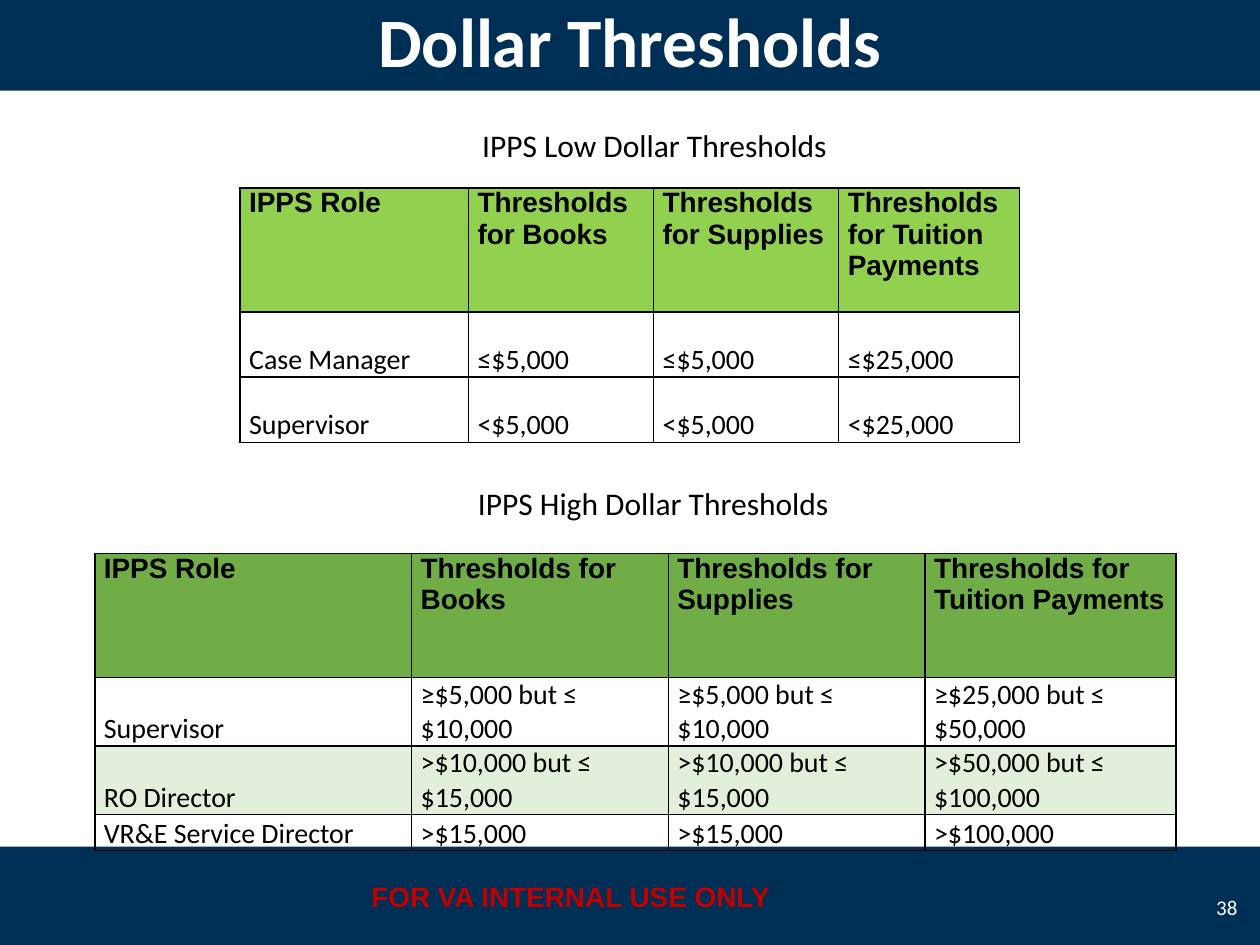
from pptx import Presentation
from pptx.dml.color import RGBColor
from pptx.enum.shapes import MSO_SHAPE
from pptx.enum.text import MSO_ANCHOR, PP_ALIGN
from pptx.oxml.ns import qn
from pptx.util import Pt
from lxml import etree

RECT = MSO_SHAPE.RECTANGLE
TOP, MIDDLE, BOTTOM = MSO_ANCHOR.TOP, MSO_ANCHOR.MIDDLE, MSO_ANCHOR.BOTTOM
CENTER, RIGHT, LEFT = PP_ALIGN.CENTER, PP_ALIGN.RIGHT, PP_ALIGN.LEFT

# Content
TITLE = "Dollar Thresholds"
NOTICE = "FOR VA INTERNAL USE ONLY"
PAGE = "38"
HEADER = ["IPPS Role", "Thresholds for Books", "Thresholds for Supplies",
          "Thresholds for Tuition Payments"]
TABLES = [
    {"caption": "IPPS Low Dollar Thresholds", "caption_at": (190.8, 68.4),
     "at": (137.2, 107.3), "header_fill": "92D050", "shaded_rows": (),
     "cols": [130.5, 105.8, 105.8, 103.4], "rows": [71, 37.3, 37.3],
     "body": [["Case Manager", "≤$5,000", "≤$5,000", "≤$25,000"],
              ["Supervisor", "<$5,000", "<$5,000", "<$25,000"]]},
    {"caption": "IPPS High Dollar Thresholds", "caption_at": (190.1, 272.9),
     "at": (54.2, 316.2), "header_fill": "70AD47", "shaded_rows": (2,),
     "cols": [181, 146.7, 146.7, 143.3], "rows": [71, 39.2, 39.2, 20.6],
     "body": [["Supervisor", "≥$5,000 but ≤ $10,000",
               "≥$5,000 but ≤ $10,000", "≥$25,000 but ≤ $50,000"],
              ["RO Director", ">$10,000 but ≤ $15,000",
               ">$10,000 but ≤ $15,000", ">$50,000 but ≤ $100,000"],
              ["VR&E Service Director", ">$15,000", ">$15,000", ">$100,000"]]},
]

# Theme: colours, and (font, size, bold, colour) for each text role
COLORS = {"band": "002F56", "shade": "E2EFDA", "border": "000000"}
TYPE = {
    "title": ("Calibri", 39.6, True, "FFFFFF"),
    "notice": ("Arial", 16, True, "C00000"),
    "page": ("Calibri", 12, False, "FFFFFF"),
    "caption": ("Calibri", 18, False, "000000"),
    "header": ("Arial", 16, True, "000000"),
    "body": ("Calibri", 16, False, "000000"),
}
SLIDE_W, SLIDE_H = 720, 540
BAND_H = 57.6
TOP_BAND = (0, -5.8, SLIDE_W, BAND_H)
BOTTOM_BAND = (0, 483.8, SLIDE_W, BAND_H)


def pts(values):
    return [Pt(v) for v in values]


def write(tf, text, role, align):
    tf.word_wrap = True
    p = tf.paragraphs[0]
    p.text = text
    p.alignment = align
    name, size, bold, color = TYPE[role]
    p.font.name, p.font.size, p.font.bold = name, Pt(size), bold
    p.font.color.rgb = RGBColor.from_string(color)
    return p


def add_band(s, box):
    sp = s.shapes.add_shape(RECT, *pts(box))
    sp.shadow.inherit = False
    sp.fill.solid()
    sp.fill.fore_color.rgb = RGBColor.from_string(COLORS["band"])
    sp.line.fill.background()


def add_text(s, box, text, role, align=CENTER, anchor=TOP):
    tf = s.shapes.add_textbox(*pts(box)).text_frame
    write(tf, text, role, align)
    tf.vertical_anchor = anchor


def add_borders(cell):
    tc_pr = cell._tc.get_or_add_tcPr()
    for i, side in enumerate(("lnL", "lnR", "lnT", "lnB")):
        ln = etree.Element(qn(f"a:{side}"), w=str(Pt(1)))
        fill = etree.SubElement(ln, qn("a:solidFill"))
        etree.SubElement(fill, qn("a:srgbClr"), val=COLORS["border"])
        tc_pr.insert(i, ln)


def fill_cell(cell, text, header, fill):
    cell.margin_left = cell.margin_right = Pt(5.2)
    cell.margin_top = cell.margin_bottom = Pt(0)
    cell.vertical_anchor = TOP if header else BOTTOM
    p = write(cell.text_frame, text, "header" if header else "body", LEFT)
    if header:
        p.space_after = Pt(3)
    if fill:
        cell.fill.solid()
        cell.fill.fore_color.rgb = RGBColor.from_string(fill)
    else:
        cell.fill.background()
    add_borders(cell)


def add_thresholds(s, spec_):
    cols, rows = spec_["cols"], spec_["rows"]
    box = (*spec_["at"], sum(cols), sum(rows))
    table = s.shapes.add_table(len(rows), len(cols), *pts(box)).table
    table.first_row = table.horz_banding = False
    for col, width in zip(table.columns, cols):
        col.width = Pt(width)
    for r, texts in enumerate([HEADER] + spec_["body"]):
        table.rows[r].height = Pt(rows[r])
        if r == 0:
            fill = spec_["header_fill"]
        else:
            fill = COLORS["shade"] if r in spec_["shaded_rows"] else None
        for c, text in enumerate(texts):
            fill_cell(table.cell(r, c), text, r == 0, fill)


prs = Presentation()
prs.slide_width, prs.slide_height = Pt(SLIDE_W), Pt(SLIDE_H)
s = prs.slides.add_slide(prs.slide_layouts[5])

# Bands and footer
add_band(s, BOTTOM_BAND)
add_text(s, (184.3, 499, 283.7, 26.6), NOTICE, "notice")
add_band(s, TOP_BAND)

# Title, brought in front of its band
title = s.shapes.title
title.left, title.top, title.width, title.height = pts(TOP_BAND)
write(title.text_frame, TITLE, "title", CENTER)
title.text_frame.vertical_anchor = MIDDLE
s.shapes._spTree.append(title._element)

add_text(s, (684, 504, 30.2, 28.8), PAGE, "page", RIGHT, MIDDLE)

# Threshold tables and their captions
for thresholds in TABLES:
    add_thresholds(s, thresholds)
    add_text(s, (*thresholds["caption_at"], 366.5, 28.8),
             thresholds["caption"], "caption")

prs.save("out.pptx")
